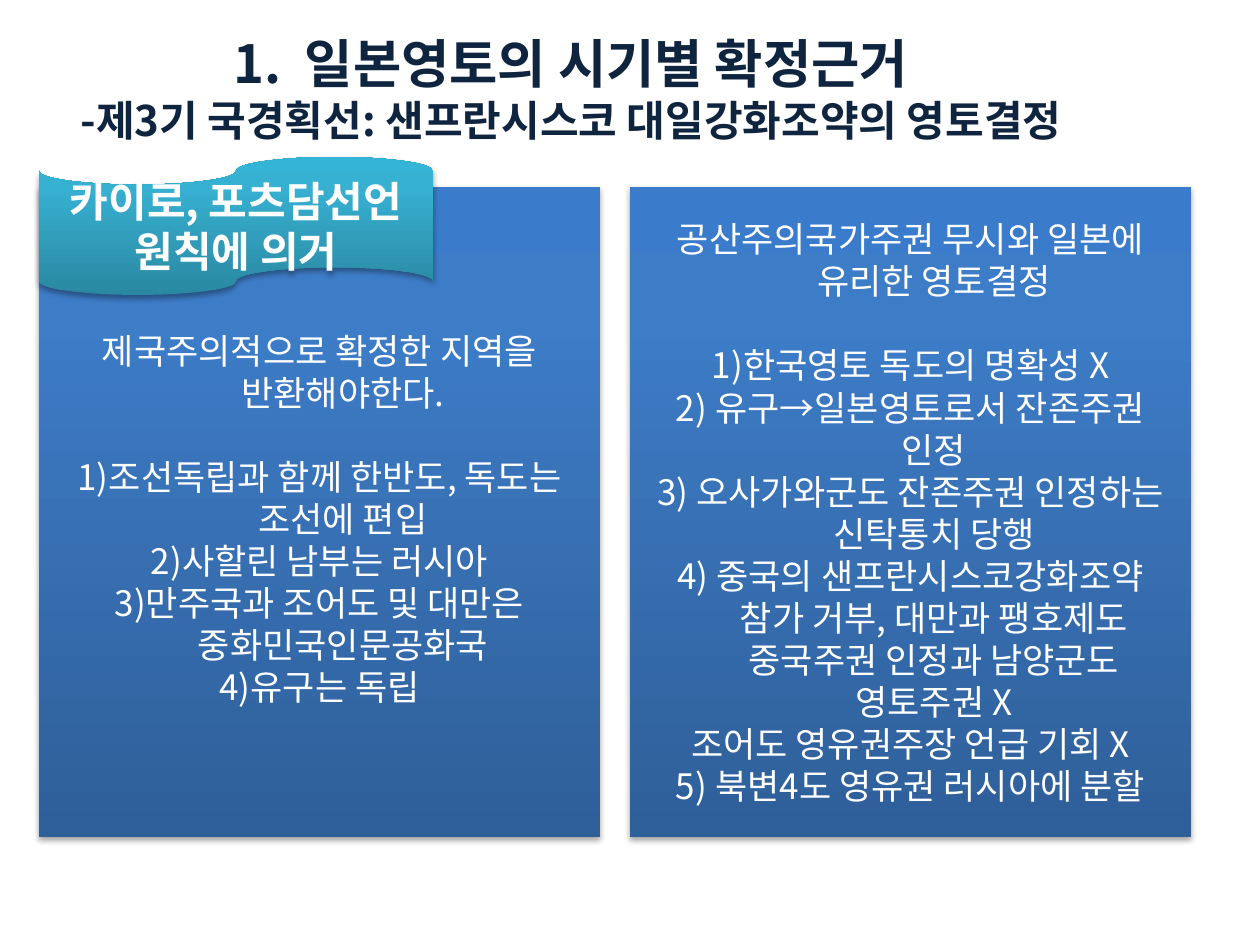
import copy
from dataclasses import dataclass
from typing import Optional

import pptx
import pptx.dml.color
import pptx.enum.shapes
import pptx.enum.text
import pptx.oxml
import pptx.oxml.ns
import pptx.util
from lxml import etree

RGBColor = pptx.dml.color.RGBColor
MSO = pptx.enum.shapes.MSO_SHAPE
qn = pptx.oxml.ns.qn

PX_PER_INCH = 126
FONT = "Noto Sans CJK KR"
NAVY = RGBColor(0x0F, 0x24, 0x3E)
WHITE = RGBColor(0xFF, 0xFF, 0xFF)
BLACK = RGBColor(0, 0, 0)
# Gradient stops at 0, 80 and 100 %, running upwards
STOPS = (0, 0.8, 1)
BLUE = (RGBColor(0x2F, 0x5F, 0x99), RGBColor(0x3D, 0x7C, 0xC7), RGBColor(0x3A, 0x7C, 0xCB))
TEAL = (RGBColor(0x2A, 0x88, 0xA2), RGBColor(0x37, 0xB1, 0xD2), RGBColor(0x34, 0xB4, 0xD6))


@dataclass
class Line:
    text: str
    size: int = 20
    before: int = 0
    number: bool = False


@dataclass
class Box:
    preset: MSO
    left: int
    top: int
    width: int
    height: int
    lines: list[Line]
    color: RGBColor = WHITE
    bold: bool = False
    hanging: int = 0
    gradient: Optional[tuple] = None
    extra_top: int = 0


def px(n: int) -> int:
    return round(n * 914400 / PX_PER_INCH)


def add_gradient(sp, colors: tuple) -> None:
    sp.fill.gradient()
    gs_list = sp._element.spPr.find(qn("a:gradFill")).find(qn("a:gsLst"))
    gs_list.append(copy.deepcopy(gs_list[-1]))
    for stop, position, color in zip(sp.fill.gradient_stops, STOPS, colors):
        stop.position = position
        stop.color.rgb = color
    sp.fill.gradient_angle = 90


def add_shadow(sp) -> None:
    effects = sp._element.spPr.find(qn("a:effectLst"))
    shadow = etree.SubElement(effects, qn("a:outerShdw"), blurRad="40000",
                              dist="23000", dir="5400000", rotWithShape="0")
    color = etree.SubElement(shadow, qn("a:srgbClr"), val=str(BLACK))
    etree.SubElement(color, qn("a:alpha"), val="35000")


def add_line(p, line: Line, box: Box) -> None:
    p.alignment = pptx.enum.text.PP_ALIGN.CENTER
    p_pr = p._p.get_or_add_pPr()
    if box.hanging:
        p_pr.set("marL", str(px(box.hanging)))
        p_pr.set("indent", str(-px(box.hanging)))
    if line.number:
        etree.SubElement(p_pr, qn("a:buFont"), typeface="+mj-lt")
        etree.SubElement(p_pr, qn("a:buAutoNum"), type="arabicPeriod")
    if line.before:
        p.space_before = pptx.util.Pt(line.before)
    r = p.add_run()
    r.text = line.text
    font_format = {"name": FONT, "size": pptx.util.Pt(line.size), "bold": box.bold}
    for name, value in font_format.items():
        setattr(r.font, name, value)
    r.font.color.rgb = box.color
    etree.SubElement(r._r.get_or_add_rPr(), qn("a:ea"), typeface=FONT)


def add_box(shapes, box: Box) -> None:
    sp = shapes.add_shape(box.preset, px(box.left), px(box.top), px(box.width), px(box.height))
    sp.shadow.inherit = False
    sp.line.fill.background()
    if box.gradient:
        add_gradient(sp, box.gradient)
        add_shadow(sp)
    else:
        sp.fill.background()
    tf = sp.text_frame
    frame_format = {
        "word_wrap": True,
        "vertical_anchor": pptx.enum.text.MSO_ANCHOR.MIDDLE,
        "margin_top": pptx.util.Inches(0.05) + px(box.extra_top),
    }
    for name, value in frame_format.items():
        setattr(tf, name, value)
    for i, line in enumerate(box.lines):
        add_line(tf.add_paragraph() if i else tf.paragraphs[0], line, box)


# Shared panel geometry
PANEL_LEFT, PANEL_TOP, PANEL_WIDTH, PANEL_HEIGHT = 39, 187, 561, 650
PANEL_GAP = 30


def panel(column: int, lines: list[Line], extra_top: int = 0) -> Box:
    left = PANEL_LEFT + column * (PANEL_WIDTH + PANEL_GAP)
    return Box(MSO.RECTANGLE, left, PANEL_TOP, PANEL_WIDTH, PANEL_HEIGHT, lines,
               hanging=47, gradient=BLUE, extra_top=extra_top)


TITLE = Box(MSO.FLOWCHART_ALTERNATE_PROCESS, 0, 39, 1142, 98, [
    Line("일본영토의 시기별 확정근거", 30, number=True),
    Line("-제3기 국경획선: 샌프란시스코 대일강화조약의 영토결정", 24),
], color=NAVY, bold=True, hanging=71)

PRINCIPLES = panel(0, [
    Line("제국주의적으로 확정한 지역을 반환해야한다."),
    Line("1)조선독립과 함께 한반도, 독도는 조선에 편입", before=24),
    Line("2)사할린 남부는 러시아"),
    Line("3)만주국과 조어도 및 대만은 중화민국인문공화국"),
    Line("4)유구는 독립"),
], extra_top=13)

BANNER = Box(MSO.FLOWCHART_PUNCHED_TAPE, PANEL_LEFT, 157, 394, 138, [
    Line("카이로, 포츠담선언 원칙에 의거", 24),
], bold=True, gradient=TEAL)

DECISIONS = panel(1, [
    Line("공산주의국가주권 무시와 일본에 유리한 영토결정"),
    Line("1)한국영토 독도의 명확성 X", before=24),
    Line("2) 유구→일본영토로서 잔존주권 인정"),
    Line("3) 오사가와군도 잔존주권 인정하는 신탁통치 당행"),
    Line("4) 중국의 샌프란시스코강화조약 참가 거부, 대만과 팽호제도 "
         "중국주권 인정과 남양군도 영토주권 X"),
    Line("조어도 영유권주장 언급 기회 X"),
    Line("5) 북변4도 영유권 러시아에 분할"),
])


def main() -> None:
    prs = pptx.Presentation()
    prs.slide_width, prs.slide_height = px(1260), px(945)
    s = prs.slides.add_slide(prs.slide_layouts[6])

    # Title
    add_box(s.shapes, TITLE)

    # Left panel grouped with its banner
    group = s.shapes.add_group_shape()
    for box in (PRINCIPLES, BANNER):
        add_box(group.shapes, box)

    # Right panel
    add_box(s.shapes, DECISIONS)

    prs.save("out.pptx")


if __name__ == "__main__":
    main()
